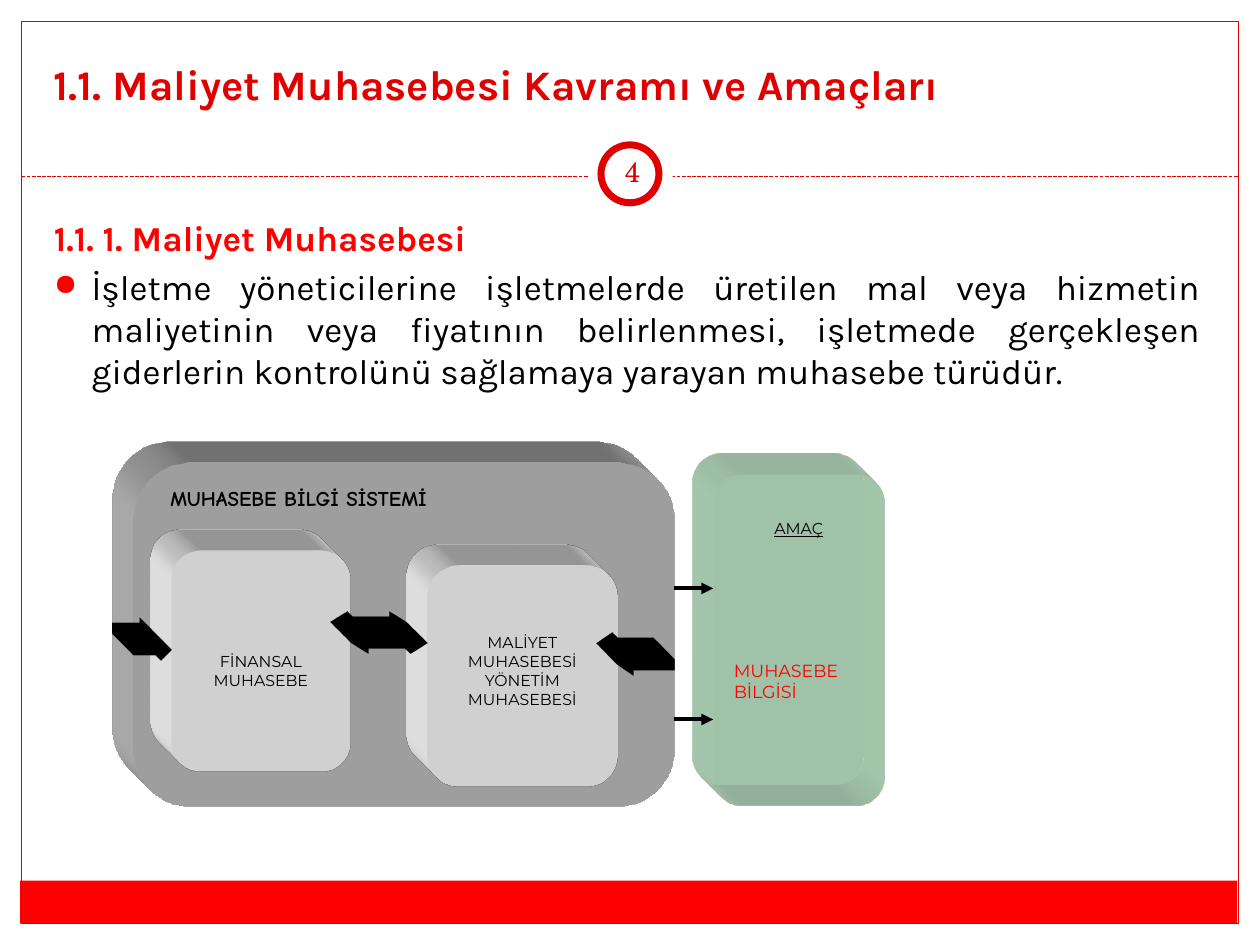
from dataclasses import dataclass
from typing import Optional

from lxml import etree
from pptx import Presentation
from pptx.dml.color import RGBColor
from pptx.enum.dml import MSO_LINE
from pptx.enum.shapes import MSO_CONNECTOR, MSO_SHAPE as Shape
from pptx.enum.text import MSO_ANCHOR as Anchor, PP_ALIGN as Align
from pptx.oxml import parse_xml
from pptx.oxml.ns import nsdecls, qn
from pptx.util import Inches, Pt

COLORS = {
    "white": "FFFFFF", "black": "000000", "red": "FF0000", "accent": "E10000",
    "silver": "C0C0C0", "green": "8CCA9B",
}


@dataclass
class Text:
    text: str
    size: float
    font: str
    color: str = "black"
    bold: bool = False
    underline: bool = False
    align: Align = Align.CENTER
    before: float = 0


@dataclass
class Box:
    kind: Shape
    at: tuple
    fill: Optional[str] = "white"
    line: Optional[str] = None
    width: float = 0.75


@dataclass
class Solid:
    box: Box
    texts: tuple = ()
    insets: tuple = (0.1, 0.05)
    adj: tuple = (0.167,)
    alpha: Optional[int] = None


def rgb(name: str) -> RGBColor:
    return RGBColor.from_string(COLORS[name])


def write(tf, texts, insets=(0.1, 0.05), anchor=Anchor.TOP) -> None:
    tf.word_wrap = True
    tf.vertical_anchor = anchor
    tf.margin_left = tf.margin_right = Inches(insets[0])
    tf.margin_top, tf.margin_bottom = Inches(insets[1]), Inches(0.05)
    for i, t in enumerate(texts):
        p = tf.add_paragraph() if i else tf.paragraphs[0]
        p.text, p.alignment, p.space_before = t.text, t.align, Pt(t.before)
        font = p.runs[0].font
        font.size, font.name, font.bold = Pt(t.size), t.font, t.bold
        font.underline, font.color.rgb = t.underline, rgb(t.color)


def add_text(slide, at, texts, insets=(0.1, 0.05), anchor=Anchor.TOP):
    tb = slide.shapes.add_textbox(*map(Inches, at))
    write(tb.text_frame, texts, insets, anchor)
    return tb.text_frame


def add_box(slide, box: Box):
    sp = slide.shapes.add_shape(box.kind, *map(Inches, box.at))
    sp.shadow.inherit = False
    if box.fill:
        sp.fill.solid()
        sp.fill.fore_color.rgb = rgb(box.fill)
    else:
        sp.fill.background()
    if box.line:
        sp.line.color.rgb = rgb(box.line)
        sp.line.width = Pt(box.width)
    else:
        sp.line.fill.background()
    return sp


def add_solid(slide, solid: Solid) -> None:
    """Draw a shape extruded towards the top left."""
    sp = add_box(slide, solid.box)
    for i, value in enumerate(solid.adj):
        sp.adjustments[i] = value
    pr = sp._element.spPr
    if solid.alpha:
        color = pr.find(qn("a:solidFill"))[0]
        etree.SubElement(color, qn("a:alpha"), val=str(solid.alpha * 1000))
    pr.append(parse_xml(
        f'<a:scene3d {nsdecls("a")}><a:camera prst="legacyObliqueTopLeft"/>'
        '<a:lightRig rig="legacyFlat3" dir="b"/></a:scene3d>'))
    pr.append(parse_xml(
        f'<a:sp3d {nsdecls("a")} extrusionH="430200" prstMaterial="legacyMatte">'
        f'<a:extrusionClr><a:srgbClr val="{COLORS[solid.box.fill]}"/>'
        '</a:extrusionClr></a:sp3d>'))
    if solid.texts:
        write(sp.text_frame, solid.texts, solid.insets)


def add_line(slide, start, end, color, width, dash=None, arrow=False) -> None:
    cn = slide.shapes.add_connector(
        MSO_CONNECTOR.STRAIGHT, *map(Inches, start + end))
    cn.line.color.rgb, cn.line.width = rgb(color), Pt(width)
    if dash:
        cn.line.dash_style = dash
    if arrow:
        etree.SubElement(cn.line._get_or_add_ln(), qn("a:tailEnd"), type="triangle")
    etree.SubElement(cn._element.spPr, qn("a:effectLst"))


def label(text: str, size: float = 9, **kw) -> Text:
    return Text(text, size, "Montserrat", **kw)


FRAME = [
    Box(Shape.RECTANGLE, (0, 0, 10, 1.52)),
    Box(Shape.RECTANGLE, (0, 0, 0.17, 7.5)),
    Box(Shape.RECTANGLE, (9.83, 0, 0.17, 7.5)),
    Box(Shape.RECTANGLE, (0.16, 6.99, 9.66, 0.34), "red"),
    Box(Shape.RECTANGLE, (0.17, 0.17, 9.66, 7.16), None, "accent"),
]
BADGE = [
    Box(Shape.OVAL, (4.67, 1.05, 0.67, 0.67)),
    Box(Shape.OVAL, (4.77, 1.15, 0.46, 0.46), "white", "accent", 4),
]
ROUND = Shape.ROUNDED_RECTANGLE
DIAGRAM = [
    Solid(Box(ROUND, (1.06, 3.67, 4.29, 2.73), "silver"),
          (Text("MUHASEBE BİLGİ SİSTEMİ", 12, "Comic Neue", bold=True,
                align=Align.LEFT),), (0.16, 0.05)),
    Solid(Box(ROUND, (1.36, 4.37, 1.42, 1.75)),
          (label("FİNANSAL MUHASEBE"),), (0.1, 0.73)),
    Solid(Box(ROUND, (3.39, 4.49, 1.51, 1.75)),
          (label("MALİYET"), label("MUHASEBESİ"), label("YÖNETİM MUHASEBESİ")),
          (0.1, 0.46)),
    Solid(Box(Shape.LEFT_RIGHT_ARROW, (2.79, 5.02, 0.6, 0.17), "black"),
          adj=(0.5, 0.8)),
    Solid(Box(Shape.LEFT_ARROW, (4.9, 5.19, 0.45, 0.17), "black"), adj=(0.5, 0.75)),
    Solid(Box(Shape.RIGHT_ARROW, (1.06, 5.07, 0.3, 0.17), "black"), adj=(0.5, 0.5)),
    Solid(Box(ROUND, (5.66, 3.77, 1.36, 2.62), "green"),
          (label("AMAÇ", underline=True),
           label("MUHASEBE", 10, color="red", align=Align.LEFT, before=70),
           label("BİLGİSİ", 10, color="red", align=Align.LEFT)),
          (0.1, 0.28), alpha=43),
]


def main() -> None:
    prs = Presentation()
    prs.slide_width, prs.slide_height = Inches(10), Inches(7.5)
    slide = prs.slides.add_slide(prs.slide_layouts[6])

    # Frame, divider and page badge
    for box in FRAME:
        add_box(slide, box)
    add_line(slide, (0.17, 1.4), (9.83, 1.4), "accent", 0.75, MSO_LINE.SQUARE_DOT)
    for box in BADGE:
        add_box(slide, box)

    # Title and page number
    add_text(slide, (0.33, 0.25, 9.33, 0.83),
             [Text("1.1. Maliyet Muhasebesi Kavramı ve Amaçları", 24, "Karla",
                   "accent", True, align=Align.LEFT)], anchor=Anchor.MIDDLE)
    add_text(slide, (4.77, 1.12, 0.5, 0.48),
             [Text("4", 16, "TeX Gyre Schola", "accent")], (0.05, 0.05),
             Anchor.MIDDLE)

    # Heading and bulleted definition
    body = add_text(slide, (0.33, 1.67, 9.3, 5), [
        Text("1.1. 1. Maliyet Muhasebesi", 20, "Karla", "red", True,
             align=Align.JUSTIFY, before=4),
        Text("İşletme yöneticilerine işletmelerde üretilen mal veya hizmetin "
             "maliyetinin veya fiyatının belirlenmesi, işletmede gerçekleşen "
             "giderlerin kontrolünü sağlamaya yarayan muhasebe türüdür.",
             20, "Karla", align=Align.JUSTIFY, before=4)])
    pPr = body.paragraphs[1]._p.get_or_add_pPr()
    pPr.set("marL", str(Inches(0.3)))
    pPr.set("indent", str(Inches(-0.3)))
    color = etree.SubElement(pPr, qn("a:buClr"))
    etree.SubElement(color, qn("a:srgbClr"), val=COLORS["red"])
    etree.SubElement(pPr, qn("a:buSzPct"), val="85000")
    etree.SubElement(pPr, qn("a:buChar"), char="●")

    # Accounting system diagram
    for solid in DIAGRAM:
        add_solid(slide, solid)
    for y in (4.67, 5.71):
        add_line(slide, (5.35, y), (5.66, y), "black", 2.25, arrow=True)

    prs.save("out.pptx")


if __name__ == "__main__":
    main()
